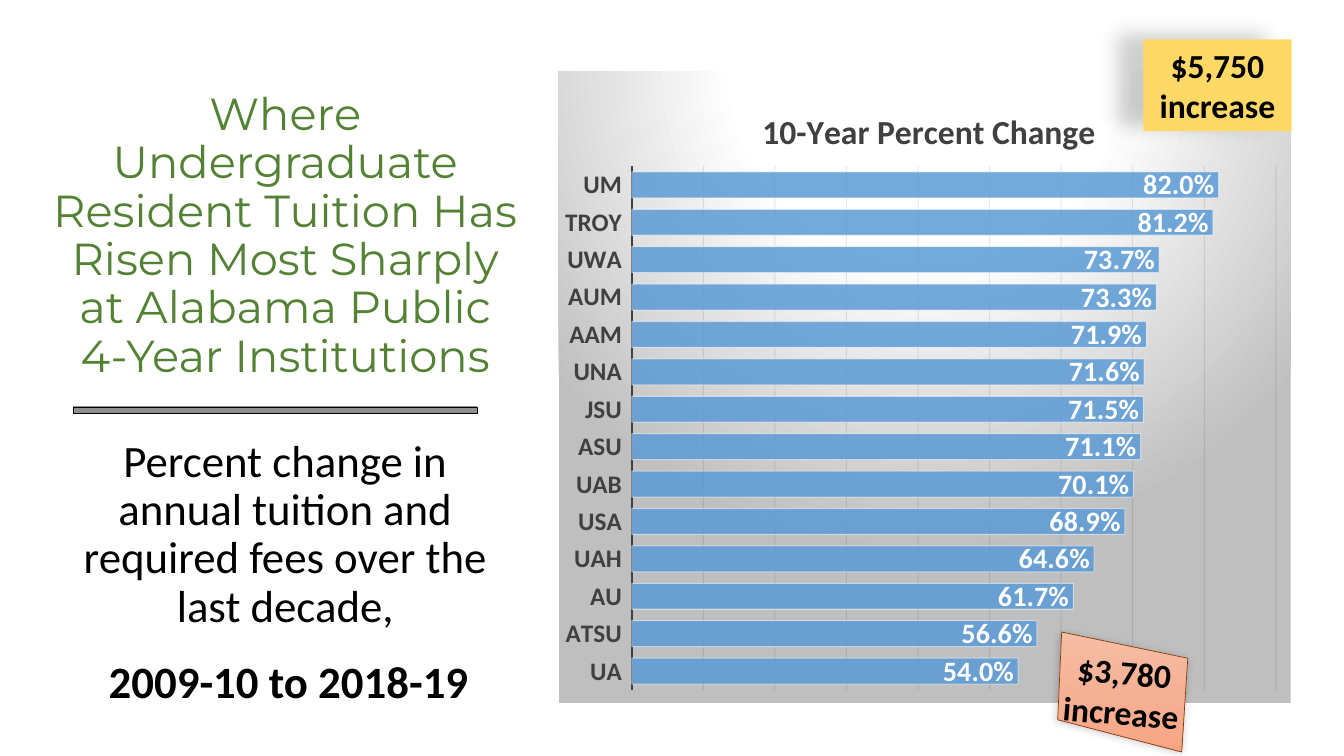
"""Slide on ten-year tuition growth at Alabama public four-year institutions."""
from lxml import etree
from pptx import Presentation
from pptx.chart.data import CategoryChartData
from pptx.dml.color import RGBColor as RGB
from pptx.enum.chart import XL_CHART_TYPE as Kind, XL_LABEL_POSITION as Pos, XL_TICK_MARK as Tick
from pptx.enum.chart import XL_TICK_LABEL_POSITION as TickPos
from pptx.enum.shapes import MSO_SHAPE as Preset
from pptx.enum.text import MSO_ANCHOR as Anchor, PP_ALIGN as Align
from pptx.oxml import parse_xml
from pptx.oxml.ns import qn
from pptx.util import Inches, Pt

COLORS = {"green": "548235", "black": "000000", "white": "FFFFFF", "gray": "404040",
          "grid": "0D0D0D", "blue": "5B9BD5", "yellow": "FFD966", "brown": "843C0B"}
NS = 'xmlns:a="http://schemas.openxmlformats.org/drawingml/2006/main"'
NS_C = 'xmlns:c="http://schemas.openxmlformats.org/drawingml/2006/chart"'


def style(font, size, color, bold=False, face="Calibri"):
    font.size, font.bold, font.name = Pt(size), bold, face
    font.color.rgb = RGB.from_string(COLORS[color])


def gradient(stops, shade):
    marks = "".join(f'<a:gs pos="{pos * 1000}"><a:srgbClr val="{tone}"/></a:gs>' for pos, tone in stops)
    return parse_xml(f'<a:gradFill {NS} rotWithShape="1"><a:gsLst>{marks}</a:gsLst>{shade}</a:gradFill>')


deck = Presentation()
deck.slide_width, deck.slide_height = Inches(13.33), Inches(7.5)
slide = deck.slides.add_slide(deck.slide_layouts[6])
shapes = slide.shapes

title = shapes.add_textbox(Inches(0.4), Inches(0.17), Inches(4.86), Inches(3.67)).text_frame
title.word_wrap, title.vertical_anchor = True, Anchor.BOTTOM
title.text = "Where Undergraduate Resident Tuition Has Risen Most Sharply at Alabama Public\v4-Year Institutions"
head = title.paragraphs[0]
head.alignment, head.line_spacing = Align.CENTER, 0.9
for run in head.runs:
    style(run.font, 32, "green", face="Montserrat")

body = shapes.add_textbox(Inches(0.68), Inches(4.3), Inches(4.3), Inches(3.11)).text_frame
body.word_wrap = True
body.text = "Percent change in annual tuition and required fees over the last decade,\n2009-10 to 2018-19"
for para, align, bold in zip(body.paragraphs, (Align.CENTER, Align.LEFT), (False, True)):
    para.alignment, para.line_spacing = align, 0.9
    style(para.runs[0].font, 32, "black", bold)
years = body.paragraphs[1]
years.space_before = Pt(20)
years._p.get_or_add_pPr().set("marL", str(Inches(0.3)))

rates = {"UM": 0.82, "TROY": 0.812, "UWA": 0.737, "AUM": 0.733, "AAM": 0.719, "UNA": 0.716, "JSU": 0.715,
         "ASU": 0.711, "UAB": 0.701, "USA": 0.689, "UAH": 0.646, "AU": 0.617, "ATSU": 0.566, "UA": 0.54}
data = CategoryChartData(number_format="0.0%")
data.categories = list(rates)
data.add_series("Series 1", list(rates.values()))
chart = shapes.add_chart(Kind.BAR_CLUSTERED, Inches(5.54), Inches(0.71),
                         Inches(7.26), Inches(6.26), data).chart
style(chart.font, 10, "black")
chart.has_legend = False
chart.has_title = True
chart.chart_title.include_in_layout = False
chart.chart_title.text_frame.text = "10-Year Percent Change"
style(chart.chart_title.text_frame.paragraphs[0].runs[0].font, 24, "gray", True)

names = chart.category_axis
names.reverse_order = True
names.major_tick_mark = names.minor_tick_mark = Tick.NONE
names.tick_label_position = TickPos.LOW
names.format.line.color.rgb = RGB.from_string(COLORS["gray"])
names.format.line.width = Pt(1.5)
style(names.tick_labels.font, 18, "gray", True)

scale = chart.value_axis
scale.visible = False
scale.minimum_scale, scale.maximum_scale, scale.major_unit = 0, 0.9, 0.1
scale.has_major_gridlines = True
grid = scale.major_gridlines.format.line
grid.color.rgb, grid.width = RGB.from_string(COLORS["grid"]), Pt(0.75)

plot = chart.plots[0]
plot.gap_width, plot.vary_by_categories = 44, False
bars = plot.series[0]
bars.format.fill.solid()
bars.format.fill.fore_color.rgb = RGB.from_string(COLORS["blue"])
edge = bars.format.line
edge.color.rgb, edge.width = RGB.from_string(COLORS["white"]), Pt(0.75)
for owner, alpha in ((bars._element.spPr.find(qn("a:solidFill")), 85),
                     (bars._element.spPr.find(qn("a:ln")), 50),
                     (scale._element.find(qn("c:majorGridlines")), 10)):
    tone = next(owner.iter(qn("a:srgbClr")))
    etree.SubElement(tone, qn("a:alpha")).set("val", str(alpha * 1000))
labels = bars.data_labels
labels.show_value, labels.position = True, Pos.INSIDE_END
labels.number_format, labels.number_format_is_linked = "0.0%", False
style(labels.font, 20, "white", True)

space = chart._chartSpace
area = parse_xml(f'<c:spPr {NS_C} {NS}><a:ln><a:noFill/></a:ln></c:spPr>')
area.insert(0, gradient(((0, "FFFFFF"), (39, "FFFFFF"), (100, "BFBFBF")),
            '<a:path path="circle"><a:fillToRect l="50000" t="-80000" r="50000" b="180000"/></a:path>'))
space.chart.addnext(area)
inner = '<c:layoutTarget val="inner"/>'
sides = '<c:w val="0.88"/><c:h val="0.83"/>'
for part, goal, left, top, size in ((space.chart.plotArea, inner, 0.1, 0.15, sides),
                                    (chart.chart_title._element, "", 0.27, 0.05, "")):
    for old in part.findall(qn("c:layout")):
        part.remove(old)
    box = parse_xml(f'<c:layout {NS_C}><c:manualLayout>{goal}<c:xMode val="edge"/><c:yMode val="edge"/>'
                    f'<c:x val="{left}"/><c:y val="{top}"/>{size}</c:manualLayout></c:layout>')
    part.insert(0 if goal else 1, box)

rule = shapes.add_shape(Preset.MATH_MINUS, 0, Inches(3.93), Inches(5.46), Inches(0.28))
rule.shadow.inherit = False
note = shapes.add_shape(Preset.RECTANGLE, Inches(11.34), Inches(0.39), Inches(1.47), Inches(0.91))
note.fill.solid()
note.fill.fore_color.rgb = RGB.from_string(COLORS["yellow"])
note.line.fill.background()

corners = [(Inches(x), Inches(y)) for x, y in ((10.53, 6.27), (11.78, 6.53), (11.72, 7.46), (10.49, 7.14))]
pen = shapes.build_freeform(*corners[0])
pen.add_line_segments(corners[1:], close=True)
tag = pen.convert_to_shape()
tag.text_frame._txBody.bodyPr.set("rot", "300000")

for shape, tones, line in ((rule, ("9D9D9D", "909090", "7C7C7C"), "black"),
                           (tag, ("F7BDA5", "F5B196", "F8A582"), "brown")):
    shape.line.color.rgb, shape.line.width = RGB.from_string(COLORS[line]), Pt(0.5)
    shape.fill.background()
    blank = shape._element.spPr.find(qn("a:noFill"))
    blank.getparent().replace(blank, gradient(zip((0, 50, 100), tones), '<a:lin ang="5400000" scaled="0"/>'))

for shape, words, alpha, blur, gap, turn in ((note, "$5,750\nincrease", 18, 14.5, 19, 192),
                                             (tag, "$3,780\nincrease", 20, 6, 1, 135)):
    shape.shadow.inherit = False
    shape._element.spPr.find(qn("a:effectLst")).append(parse_xml(
        f'<a:outerShdw {NS} blurRad="{Pt(blur)}" dist="{Pt(gap)}" dir="{turn * 60000}" rotWithShape="0">'
        f'<a:srgbClr val="{COLORS["black"]}"><a:alpha val="{alpha * 1000}"/></a:srgbClr></a:outerShdw>'))
    frame = shape.text_frame
    frame.word_wrap, frame.vertical_anchor = True, Anchor.MIDDLE
    frame.margin_left = frame.margin_right = 0
    frame.text = words
    for para in frame.paragraphs:
        para.alignment = Align.CENTER
        style(para.runs[0].font, 24, "black", True)

deck.save("out.pptx")
